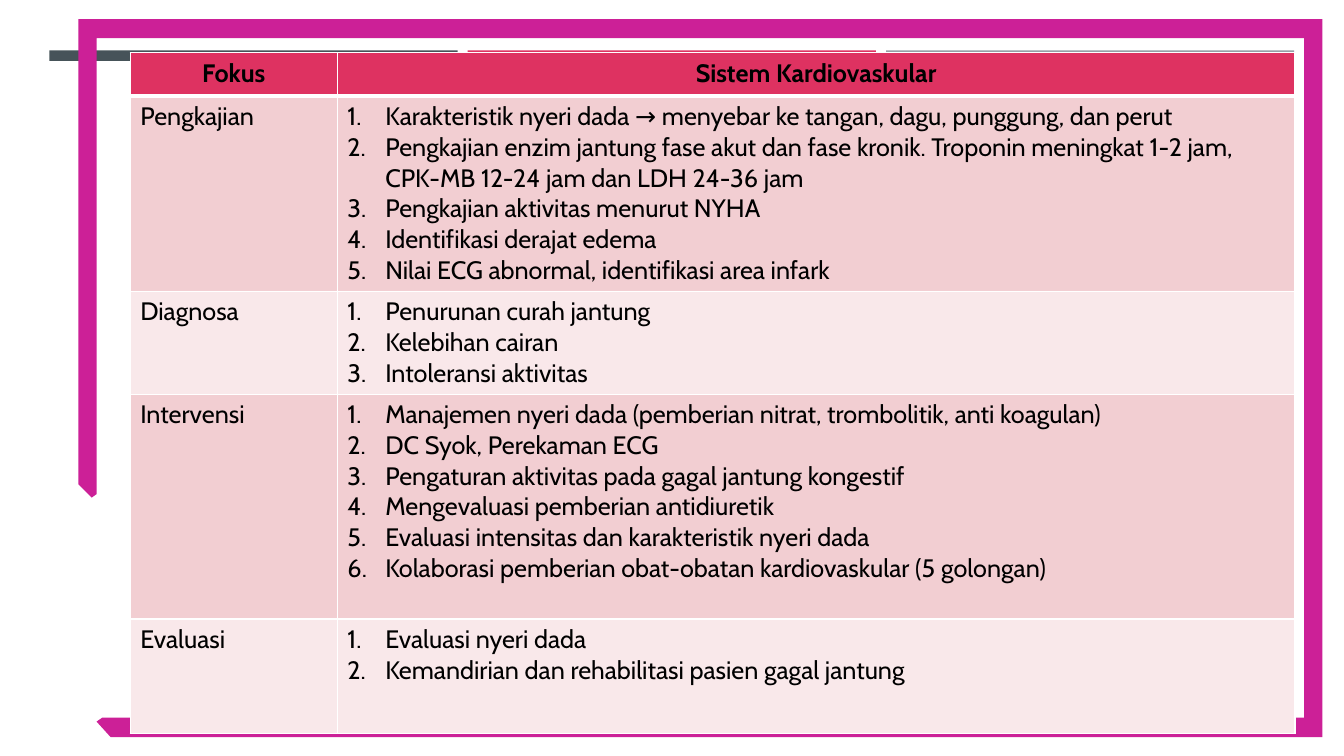
"""Build a slide with a nursing-focus table for the cardiovascular system."""
from lxml.etree import SubElement
from pptx import Presentation
from pptx.dml.color import RGBColor
from pptx.enum.shapes import MSO_SHAPE
from pptx.enum.text import PP_ALIGN
from pptx.oxml.ns import qn
from pptx.util import Pt

HEADINGS = ["Fokus", "Sistem Kardiovaskular"]
STAGES = [
    ("Pengkajian", 139.5, [
        "Karakteristik nyeri dada → menyebar ke tangan, dagu, punggung, dan perut",
        "Pengkajian enzim jantung fase akut dan fase kronik. Troponin meningkat 1-2 jam, "
        "CPK-MB 12-24 jam dan LDH 24-36 jam",
        "Pengkajian aktivitas menurut NYHA",
        "Identifikasi derajat edema",
        "Nilai ECG abnormal, identifikasi area infark",
    ]),
    ("Diagnosa", 73.5, [
        "Penurunan curah jantung",
        "Kelebihan cairan",
        "Intoleransi aktivitas",
    ]),
    ("Intervensi", 160.5, [
        "Manajemen nyeri dada (pemberian nitrat, trombolitik, anti koagulan)",
        "DC Syok, Perekaman ECG",
        "Pengaturan aktivitas pada gagal jantung kongestif",
        "Mengevaluasi pemberian antidiuretik",
        "Evaluasi intensitas dan karakteristik nyeri dada",
        "Kolaborasi pemberian obat-obatan kardiovaskular (5 golongan)",
    ]),
    ("Evaluasi", 81.5, [
        "Evaluasi nyeri dada",
        "Kemandirian dan rehabilitasi pasien gagal jantung",
    ]),
]
HEADING_HEIGHT = 31
COLUMN_WIDTHS = [148, 684]
TABLE_LEFT, TABLE_TOP = 93, 37.7
NUMBER_INDENT = 27
HEADING_FILL = "DE3261"
BAND_FILLS = ["F2CED2", "F9E8EA"]
BARS = ["465359", "DE3261", "969FA7"]
BAR_LEFT, BAR_TOP, BAR_WIDTH, BAR_HEIGHT, BAR_STEP = 35.3, 36, 291.6, 7.5, 298.8
FRAME_COLOR = "CC2097"
FRAME = [
    (56, 13.7), (944.5, 13.7), (944.5, 526.5), (79, 526.5), (69, 515.5), (73, 512.7),
    (931.5, 512.7), (931.5, 27.3), (69, 27.3), (69, 353), (65.5, 355.5), (56, 346),
]


def color(hex_code):
    return RGBColor.from_string(hex_code)


def paint(shape, hex_code):
    shape.shadow.inherit = False
    shape.fill.solid()
    shape.fill.fore_color.rgb = color(hex_code)
    shape.line.fill.background()


def style_cell(cell, fill, bottom_width=1, top_width=1):
    properties = cell._tc.get_or_add_tcPr()
    for side, width in [("L", 1), ("R", 1), ("T", top_width), ("B", bottom_width)]:
        border = SubElement(properties, qn(f"a:ln{side}"), w=str(Pt(width)))
        SubElement(SubElement(border, qn("a:solidFill")), qn("a:srgbClr"), val="FFFFFF")
    cell.fill.solid()
    cell.fill.fore_color.rgb = color(fill)


def write_cell(cell, lines, bold=False, centered=False, numbered=False):
    cell.text_frame.text = "\n".join(lines)
    for paragraph in cell.text_frame.paragraphs:
        if numbered:
            properties = paragraph._p.get_or_add_pPr()
            properties.set("marL", str(Pt(NUMBER_INDENT)))
            properties.set("indent", str(-Pt(NUMBER_INDENT)))
            SubElement(properties, qn("a:buFont"), typeface="+mj-lt")
            SubElement(properties, qn("a:buAutoNum"), type="arabicPeriod")
        if centered:
            paragraph.alignment = PP_ALIGN.CENTER
        for run in paragraph.runs:
            run.font.name = "Cabin"
            run.font.size = Pt(18)
            run.font.bold = bold
            run.font.color.rgb = color("000000")


def add_backdrop(slide):
    for index, bar_color in enumerate(BARS):
        bar = slide.shapes.add_shape(
            MSO_SHAPE.RECTANGLE, Pt(BAR_LEFT + index * BAR_STEP), Pt(BAR_TOP),
            Pt(BAR_WIDTH), Pt(BAR_HEIGHT))
        paint(bar, bar_color)
    corners = [(Pt(x), Pt(y)) for x, y in FRAME]
    outline = slide.shapes.build_freeform(*corners[0])
    outline.add_line_segments(corners[1:], close=True)
    paint(outline.convert_to_shape(), FRAME_COLOR)


def add_focus_table(slide):
    heights = [HEADING_HEIGHT] + [height for _, height, _ in STAGES]
    table = slide.shapes.add_table(
        len(heights), len(HEADINGS), Pt(TABLE_LEFT), Pt(TABLE_TOP),
        Pt(sum(COLUMN_WIDTHS)), Pt(sum(heights))).table
    for column, width in zip(table.columns, COLUMN_WIDTHS):
        column.width = Pt(width)
    for row, height in zip(table.rows, heights):
        row.height = Pt(height)
    for column, heading in enumerate(HEADINGS):
        style_cell(table.cell(0, column), HEADING_FILL, bottom_width=3)
        write_cell(table.cell(0, column), [heading], bold=True, centered=True)
    for row, (stage, _, steps) in enumerate(STAGES, start=1):
        for column in range(len(HEADINGS)):
            style_cell(table.cell(row, column), BAND_FILLS[(row - 1) % 2],
                       top_width=3 if row == 1 else 1)
        write_cell(table.cell(row, 0), [stage])
        write_cell(table.cell(row, 1), steps, numbered=True)


def main():
    presentation = Presentation()
    presentation.slide_width, presentation.slide_height = Pt(960), Pt(540)
    slide = presentation.slides.add_slide(presentation.slide_layouts[6])
    add_backdrop(slide)
    add_focus_table(slide)
    presentation.save("out.pptx")


if __name__ == "__main__":
    main()
